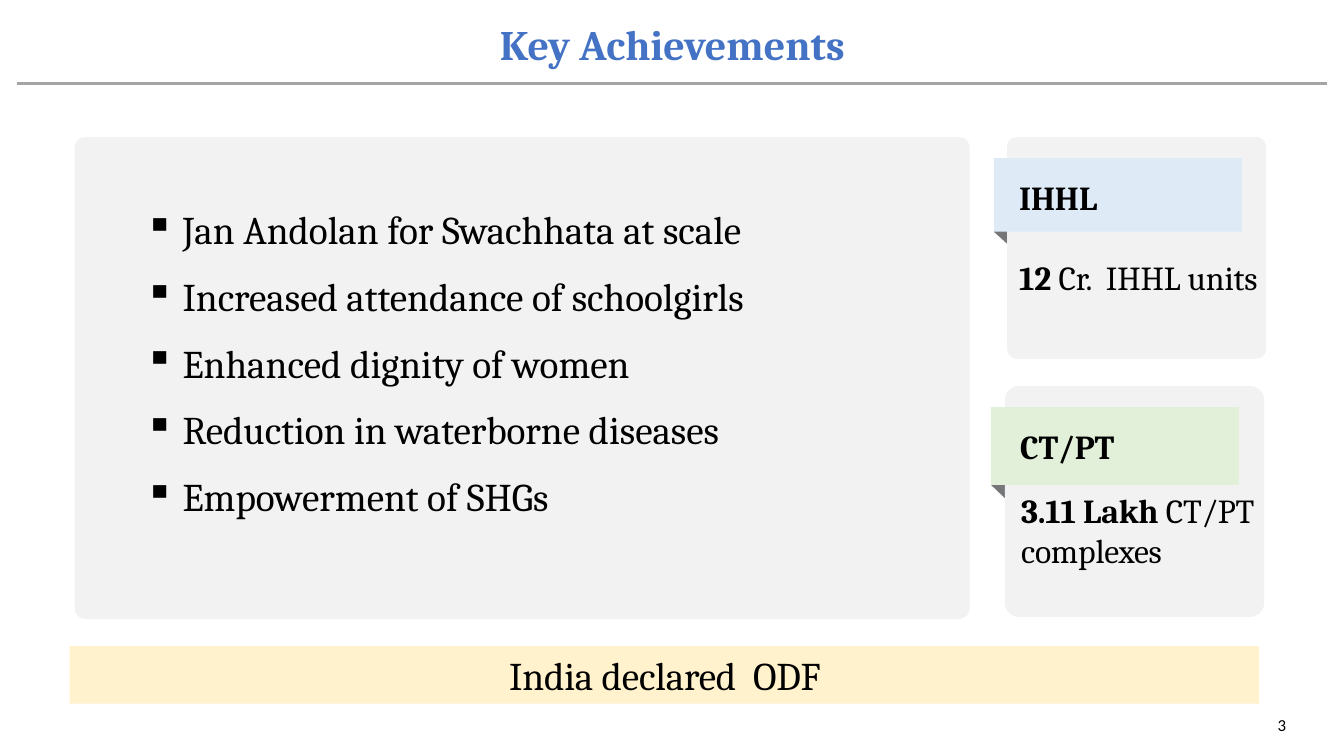
from lxml import etree
from pptx import Presentation
from pptx import util as u
from pptx.dml.color import RGBColor
from pptx.enum import shapes, text
from pptx.oxml import ns

GREY, FOLD, INK = "F2F2F2", "747678", "000000"
ALIGN = text.PP_ALIGN
rgb = RGBColor.from_string

deck = Presentation()
deck.slide_width, deck.slide_height = u.Inches(13.33), u.Inches(7.5)
page = deck.slides.add_slide(deck.slide_layouts[6])
# The grid has 100 columns and 100 rows.
column, row = deck.slide_width / 100, deck.slide_height / 100


def add_box(left, top, width, height, fill=None, corner=None):
    """Place a filled shape, or a text box without margins if there is no fill."""
    area = [int(left * column), int(top * row), int(width * column), int(height * row)]
    if fill is None:
        box = page.shapes.add_textbox(*area)
        frame = box.text_frame
        frame.margin_left = frame.margin_right = frame.margin_top = frame.margin_bottom = 0
    else:
        kind = shapes.MSO_SHAPE.ROUNDED_RECTANGLE if corner else shapes.MSO_SHAPE.RECTANGLE
        box = page.shapes.add_shape(kind, *area)
        if corner:
            box.adjustments[0] = corner
        box.fill.solid()
        box.fill.fore_color.rgb = rgb(fill)
        box.line.fill.background()
        box.shadow.inherit = False
    box.text_frame.word_wrap = True
    return box


def write(para, spans, size, align=ALIGN.LEFT, color=INK, font="Cambria",
          before=0, after=0, indent=0, hanging=0, tracking=0):
    """Fill a paragraph with (words, bold) spans of one size."""
    para.alignment = align
    para.space_before, para.space_after = u.Pt(before), u.Pt(after)
    properties = para._p.get_or_add_pPr()
    properties.set("marL", str(u.Inches(indent)))
    properties.set("indent", str(u.Inches(-hanging)))
    for words, bold in spans:
        span = para.add_run()
        span.text = words
        span.font.name, span.font.size, span.font.bold = font, u.Pt(size), bold
        span.font.color.rgb = rgb(color)
        if tracking:
            span.font._element.set("spc", str(tracking))


# Title and rule
title = add_box(8.1, 1.87, 83.85, 7.87)
title.text_frame.vertical_anchor = text.MSO_ANCHOR.MIDDLE
write(title.text_frame.paragraphs[0], [("Key Achievements", True)], 30, ALIGN.CENTER, "4472C4")

rule = page.shapes.add_connector(
    shapes.MSO_CONNECTOR.STRAIGHT,
    int(1.28 * column), int(11.07 * row), int(98.7 * column), int(11.07 * row))
rule.line.color.rgb, rule.line.width = rgb("A5A5A5"), u.Pt(2.25)
etree.SubElement(rule._element.spPr, ns.qn("a:effectLst"))

# Figure cards: card, band, label and body areas in grid cells
cards = [
    ("IHHL", "DEEBF7", 0.045, (74.93, 18.13, 19.28, 29.33), (73.95, 20.93, 18.45, 9.73),
     (73.65, 23.35, 18.45, 5.47), (75.75, 34, 18.2, 10.67),
     [("12", True), (" Cr.  IHHL units", False)]),
    ("CT/PT", "E2F0D9", 0.06, (74.78, 51.07, 19.28, 30.53), (73.73, 53.87, 18.45, 10.27),
     (73.73, 56.4, 18.45, 5.73), (75.9, 64.8, 17.85, 16),
     [("3.11 Lakh ", True), ("CT/PT complexes", False)]),
]
# Fold corners: columns from the band's left, shares of its height below its bottom
fold_corners = [(0.98, -0.29), (0, 0), (3.75, 0.62), (4.73, 0.33)]

for name, tint, corner, card_area, band_area, label_area, body_area, figure in cards:
    left, top, width, height = band_area
    points = [(int((left + dx) * column), int((top + height * (1 + dy)) * row))
              for dx, dy in fold_corners]
    outline = page.shapes.build_freeform(*points[0])
    outline.add_line_segments(points[1:], close=True)
    fold = outline.convert_to_shape()
    fold.fill.solid()
    fold.fill.fore_color.rgb = rgb(FOLD)
    fold.line.fill.background()
    fold.shadow.inherit = False

    add_box(*card_area, GREY, corner)
    body = add_box(*body_area)
    write(body.text_frame.paragraphs[0], figure, 24, after=6, indent=0.01, tracking=-10)
    add_box(*band_area, tint)
    label = add_box(*label_area)
    write(label.text_frame.paragraphs[0], [(name, True)], 24,
          before=2.4, indent=0.29, tracking=-10)

# Closing statement
banner = add_box(5.18, 85.47, 88.5, 7.6, "FFF2CC")
write(banner.text_frame.paragraphs[0], [("India declared  ODF", False)], 28, ALIGN.CENTER,
      before=6, after=6, indent=0.01, tracking=-10)

# Achievements
add_box(5.55, 18.13, 66.6, 63.73, GREY, 0.022)
achievements = [
    "Jan Andolan for Swachhata at scale",
    "Increased attendance of schoolgirls",
    "Enhanced dignity of women",
    "Reduction in waterborne diseases",
    "Empowerment of SHGs",
]
frame = add_box(10.73, 27.2, 53.85, 41.47).text_frame
for number, achievement in enumerate(achievements):
    para = frame.add_paragraph() if number else frame.paragraphs[0]
    write(para, [(achievement, False)], 28, before=6, after=8, indent=0.38, hanging=0.37)
    properties = para._p.get_or_add_pPr()
    bullet_color = etree.SubElement(properties, ns.qn("a:buClr"))
    etree.SubElement(bullet_color, ns.qn("a:srgbClr"), val=INK)
    etree.SubElement(properties, ns.qn("a:buChar"), char="▪")

# Page number
page_number = add_box(73.95, 94.53, 21.75, 4)
write(page_number.text_frame.paragraphs[0], [("3", False)], 12, ALIGN.RIGHT, font="Calibri")

deck.save("out.pptx")
